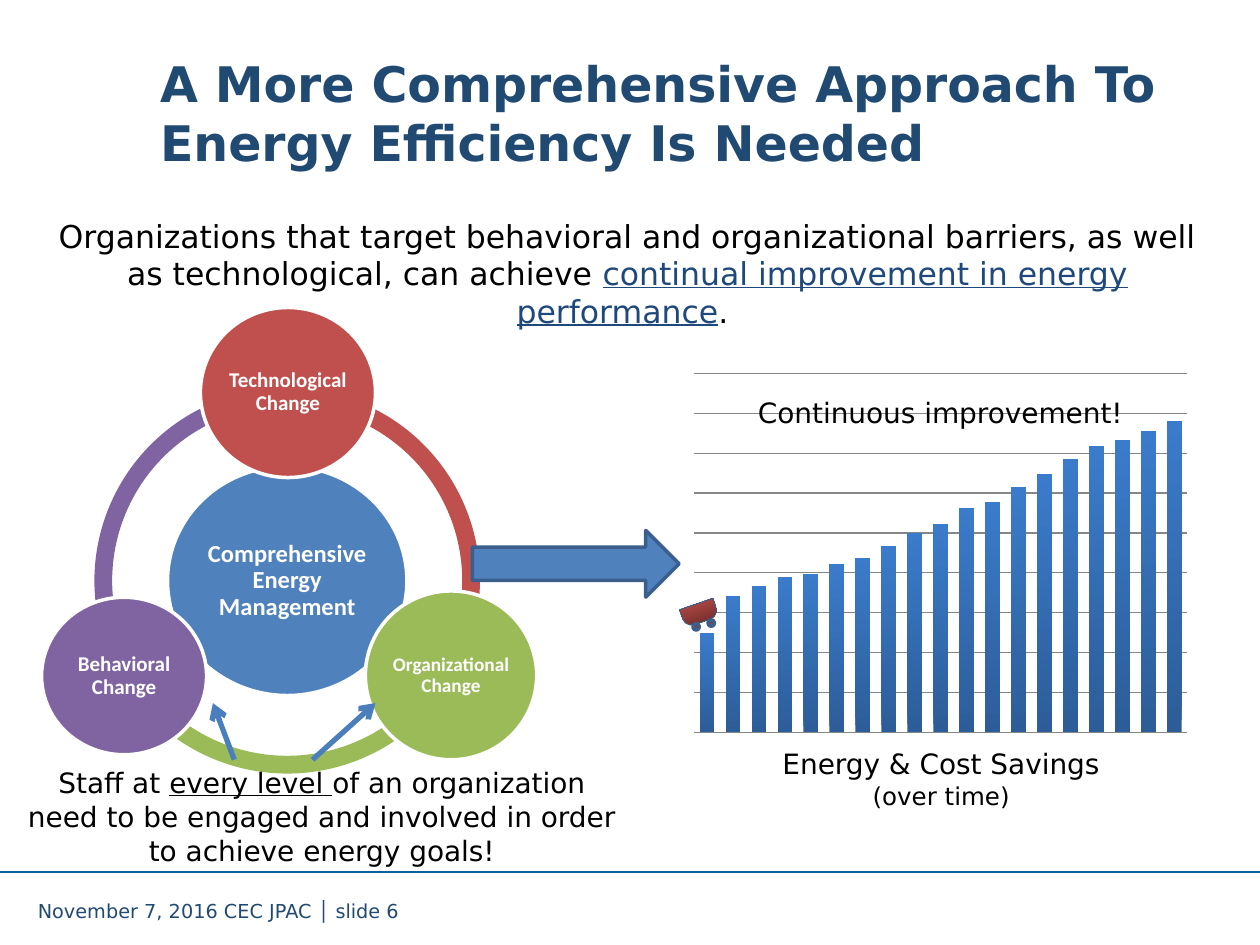
from dataclasses import dataclass
from typing import Any, Optional

from lxml import etree
from pptx import Presentation
from pptx.chart.data import CategoryChartData
from pptx.dml.color import RGBColor
from pptx.enum.chart import XL_CHART_TYPE
from pptx.enum.shapes import MSO_CONNECTOR, MSO_SHAPE
from pptx.enum.text import MSO_ANCHOR, PP_ALIGN
from pptx.oxml.ns import qn
from pptx.util import Inches, Pt

COLUMN = XL_CHART_TYPE.COLUMN_CLUSTERED
STRAIGHT = MSO_CONNECTOR.STRAIGHT
OVAL, ARC = MSO_SHAPE.OVAL, MSO_SHAPE.BLOCK_ARC
CART_BODY, RIGHT_ARROW = MSO_SHAPE.ROUND_2_SAME_RECTANGLE, MSO_SHAPE.RIGHT_ARROW
LEFT, CENTER = PP_ALIGN.LEFT, PP_ALIGN.CENTER
TOP, MIDDLE = MSO_ANCHOR.TOP, MSO_ANCHOR.MIDDLE

BLACK = RGBColor(0x00, 0x00, 0x00)
WHITE = RGBColor(0xFF, 0xFF, 0xFF)
NAVY = RGBColor(0x21, 0x4A, 0x73)
RULE_BLUE = RGBColor(0x0C, 0x5F, 0x99)
LINK_BLUE = RGBColor(0x1F, 0x49, 0x7D)
BLUE = RGBColor(0x4F, 0x81, 0xBD)
EDGE_BLUE = RGBColor(0x3A, 0x5F, 0x8C)
POINTER_BLUE = RGBColor(0x4B, 0x7E, 0xBC)
BAR_BOTTOM = RGBColor(0x2C, 0x5D, 0x98)
BAR_TOP = RGBColor(0x3B, 0x7B, 0xCB)
RED = RGBColor(0xC0, 0x50, 0x4D)
GREEN = RGBColor(0x9B, 0xBB, 0x59)
PURPLE = RGBColor(0x80, 0x64, 0xA2)
CART_DARK = RGBColor(0x63, 0x25, 0x23)
CART_LIGHT = RGBColor(0xC0, 0x50, 0x4D)
GRID_GRAY = RGBColor(0x86, 0x86, 0x86)

SANS, LABEL_FONT = "DejaVu Sans", "Calibri"
Box = tuple[float, float, float, float]


@dataclass(frozen=True)
class Run:
    text: str
    size: float
    color: RGBColor = BLACK
    font: str = SANS
    bold: bool = False
    underline: bool = False


@dataclass(frozen=True)
class TextBlock:
    box: Box
    paragraphs: list[list[Run]]
    align: Any = CENTER
    left_inset: float = 0.1


@dataclass(frozen=True)
class Circle:
    box: Box
    label: str
    size: float
    color: RGBColor


@dataclass(frozen=True)
class Arc:
    start: float
    end: float
    color: RGBColor


@dataclass(frozen=True)
class CartPart:
    kind: Any
    box: Box
    rotation: float
    line_width: float


@dataclass(frozen=True)
class Line:
    start: tuple[float, float]
    end: tuple[float, float]
    color: RGBColor
    width: float
    head: Optional[str] = None


def set_values(target: Any, values: dict[str, Any]) -> None:
    for name, value in values.items():
        setattr(target, name, value)


def write(frame: Any, paragraphs: list[list[Run]], align: Any, spacing: float = 1.0) -> None:
    for index, runs in enumerate(paragraphs):
        paragraph = frame.add_paragraph() if index else frame.paragraphs[0]
        set_values(paragraph, {"alignment": align, "line_spacing": spacing})
        for item in runs:
            run = paragraph.add_run()
            run.text = item.text
            set_values(run.font, {"name": item.font, "size": Pt(item.size),
                                  "bold": item.bold, "underline": item.underline})
            run.font.color.rgb = item.color


def add_text(slide: Any, block: TextBlock) -> None:
    frame = slide.shapes.add_textbox(*map(Inches, block.box)).text_frame
    set_values(frame, {"word_wrap": True, "vertical_anchor": TOP,
                       "margin_left": Inches(block.left_inset)})
    write(frame, block.paragraphs, block.align)


def add_shape(slide: Any, kind: Any, box: Box, fill: Optional[RGBColor] = None,
              line: Optional[RGBColor] = None, width: float = 2) -> Any:
    shape = slide.shapes.add_shape(kind, *map(Inches, box))
    shape.shadow.inherit = False
    if fill is not None:
        shape.fill.solid()
        shape.fill.fore_color.rgb = fill
    if line is None:
        shape.line.fill.background()
    else:
        shape.line.color.rgb = line
        shape.line.width = Pt(width)
    return shape


def shade(fill: Any, first: RGBColor, last: RGBColor, angle: float) -> None:
    fill.gradient()
    fill.gradient_angle = angle
    for stop, color in zip(fill.gradient_stops, (first, last)):
        stop.color.rgb = color


def add_circle(slide: Any, circle: Circle) -> None:
    frame = add_shape(slide, OVAL, circle.box, circle.color, WHITE).text_frame
    set_values(frame, {"word_wrap": True, "vertical_anchor": MIDDLE,
                       "margin_left": 0, "margin_right": 0,
                       "margin_top": 0, "margin_bottom": 0})
    write(frame, [[Run(circle.label, circle.size, WHITE, LABEL_FONT, bold=True)]], CENTER, 0.9)


def add_arc(slide: Any, arc: Arc) -> None:
    shape = add_shape(slide, ARC, (0.75, 3.08, 3.06, 3.06), arc.color)
    for index, value in enumerate((arc.start, arc.end, 0.046)):
        shape.adjustments[index] = value


def add_cart_part(slide: Any, part: CartPart) -> None:
    shape = add_shape(slide, part.kind, part.box, line=EDGE_BLUE, width=part.line_width)
    shade(shape.fill, CART_DARK, CART_LIGHT, 270)
    shape.rotation = part.rotation
    if part.kind == CART_BODY:
        shape.adjustments[0] = 0.5


def add_line(slide: Any, line: Line) -> None:
    connector = slide.shapes.add_connector(STRAIGHT, *map(Inches, line.start + line.end))
    connector.line.color.rgb = line.color
    connector.line.width = Pt(line.width)
    properties = connector._element.spPr
    if line.head:
        etree.SubElement(properties.find(qn("a:ln")), qn("a:tailEnd"), type=line.head)
    etree.SubElement(properties, qn("a:effectLst"))


def add_savings_chart(slide: Any) -> None:
    savings = (32, 44, 47, 50, 51, 54, 56, 60, 64, 67, 72, 74, 79, 83, 88, 92, 94, 97, 100)
    data = CategoryChartData()
    data.categories = [str(number) for number in range(1, len(savings) + 1)]
    data.add_series("Series 1", savings)
    chart = slide.shapes.add_chart(COLUMN, *map(Inches, (5.34, 2.96, 4.21, 3.17)), data).chart
    set_values(chart, {"has_legend": False, "has_title": False})
    set_values(chart.font, {"name": LABEL_FONT, "size": Pt(18)})
    chart.font.color.rgb = BLACK
    set_values(chart.category_axis, {"visible": False, "has_major_gridlines": False})
    set_values(chart.value_axis, {"visible": False, "has_major_gridlines": True,
                                  "minimum_scale": 0, "maximum_scale": 115.38,
                                  "major_unit": 12.82})
    grid = chart.value_axis.major_gridlines.format.line
    grid.color.rgb = GRID_GRAY
    grid.width = Pt(0.75)
    plot = chart.plots[0]
    set_values(plot, {"gap_width": 75, "vary_by_categories": False})
    shade(plot.series[0].format.fill, BAR_BOTTOM, BAR_TOP, 90)
    area = chart._chartSpace.chart.plotArea
    for old in area.findall(qn("c:layout")):
        area.remove(old)
    layout = etree.Element(qn("c:layout"))
    manual = etree.SubElement(layout, qn("c:manualLayout"))
    for tag, value in (("layoutTarget", "inner"), ("xMode", "edge"), ("yMode", "edge"),
                       ("x", "0.04"), ("y", "0"), ("w", "0.93"), ("h", "0.9")):
        etree.SubElement(manual, qn(f"c:{tag}"), val=value)
    area.insert(0, layout)


def add_title(slide: Any) -> None:
    title = slide.shapes.title
    set_values(title, {"left": Inches(1.17), "top": Inches(0.3),
                       "width": Inches(8.83), "height": Inches(1.18)})
    set_values(title.text_frame, {"word_wrap": True, "vertical_anchor": MIDDLE})
    heading = "A More Comprehensive Approach To Energy Efficiency Is Needed"
    write(title.text_frame, [[Run(heading, 28, NAVY, bold=True)]], LEFT)


FOOTER = TextBlock((0, 7.09, 5, 0.29),
                   [[Run("November 7, 2016 CEC JPAC │ slide 6", 11, NAVY)]], LEFT, 0.3)
CAPTIONS = [
    TextBlock((5.97, 5.88, 3, 0.94),
              [[Run("Energy & Cost Savings", 16)], [Run("(over time)", 14)]]),
    TextBlock((5.65, 3.09, 3.63, 0.37), [[Run("Continuous improvement!", 16)]]),
    TextBlock((0.11, 6.03, 4.89, 0.91), [[
        Run("Staff at ", 16), Run("every level ", 16, underline=True),
        Run("of an organization need to be engaged and involved in order "
            "to achieve energy goals!", 16)]]),
    TextBlock((0.22, 1.67, 9.52, 1.01), [[
        Run("Organizations that target behavioral and organizational barriers, "
            "as well as technological, can achieve ", 18),
        Run("continual improvement in energy performance", 18, LINK_BLUE, underline=True),
        Run(". ", 18)]]),
]
CART = [
    CartPart(CART_BODY, (5.41, 4.79, 0.28, 0.15), 160.9, 0.5),
    CartPart(OVAL, (5.5, 4.95, 0.05, 0.05), 8, 2),
    CartPart(OVAL, (5.62, 4.92, 0.05, 0.05), 8, 2),
]
ARCS = [Arc(90, 162, PURPLE), Arc(18, 90, GREEN), Arc(162, 18, RED)]
CIRCLES = [
    Circle((1.33, 3.7, 1.9, 1.82), "Comprehensive Energy Management", 14, BLUE),
    Circle((1.59, 2.44, 1.39, 1.35), "Technological Change", 12, RED),
    Circle((2.9, 4.69, 1.36, 1.34), "Organizational Change", 11, GREEN),
    Circle((0.33, 4.74, 1.31, 1.25), "Behavioral Change", 12, PURPLE),
]
FOOTER_RULE = Line((0, 6.92), (10, 6.92), RULE_BLUE, 1.5)
POINTERS = [Line((2.48, 6.03), (2.98, 5.58), POINTER_BLUE, 3, "arrow"),
            Line((1.86, 6.03), (1.69, 5.58), POINTER_BLUE, 3, "arrow")]


def main() -> None:
    deck = Presentation()
    set_values(deck, {"slide_width": Inches(10), "slide_height": Inches(7.5)})
    slide = deck.slides.add_slide(deck.slide_layouts[5])
    add_title(slide)
    add_line(slide, FOOTER_RULE)
    add_text(slide, FOOTER)
    add_savings_chart(slide)
    for draw, items in ((add_cart_part, CART), (add_arc, ARCS), (add_circle, CIRCLES),
                        (add_text, CAPTIONS), (add_line, POINTERS)):
        for item in items:
            draw(slide, item)
    add_shape(slide, RIGHT_ARROW, (3.75, 4.21, 1.64, 0.53), BLUE, EDGE_BLUE)
    deck.save("out.pptx")


if __name__ == "__main__":
    main()
